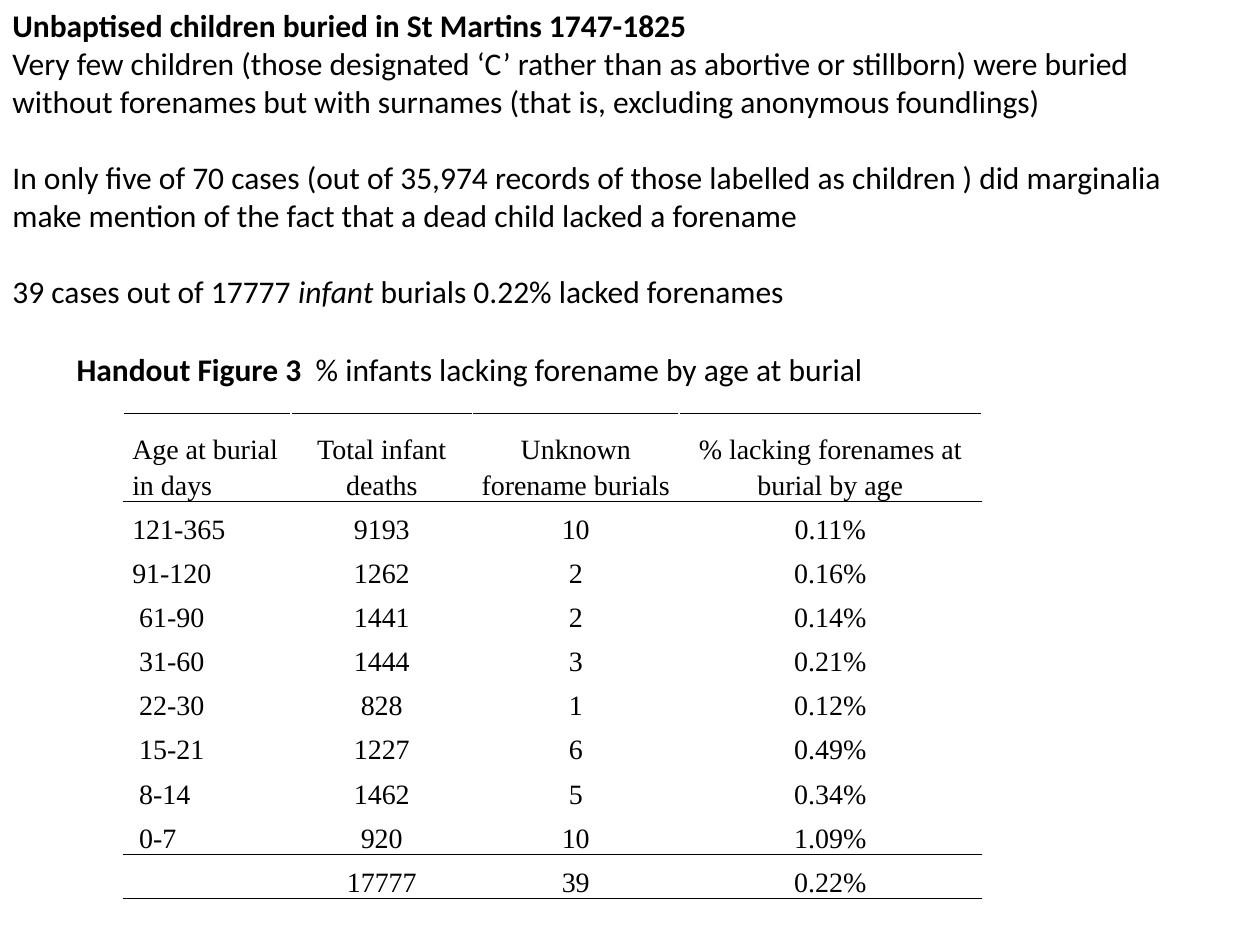
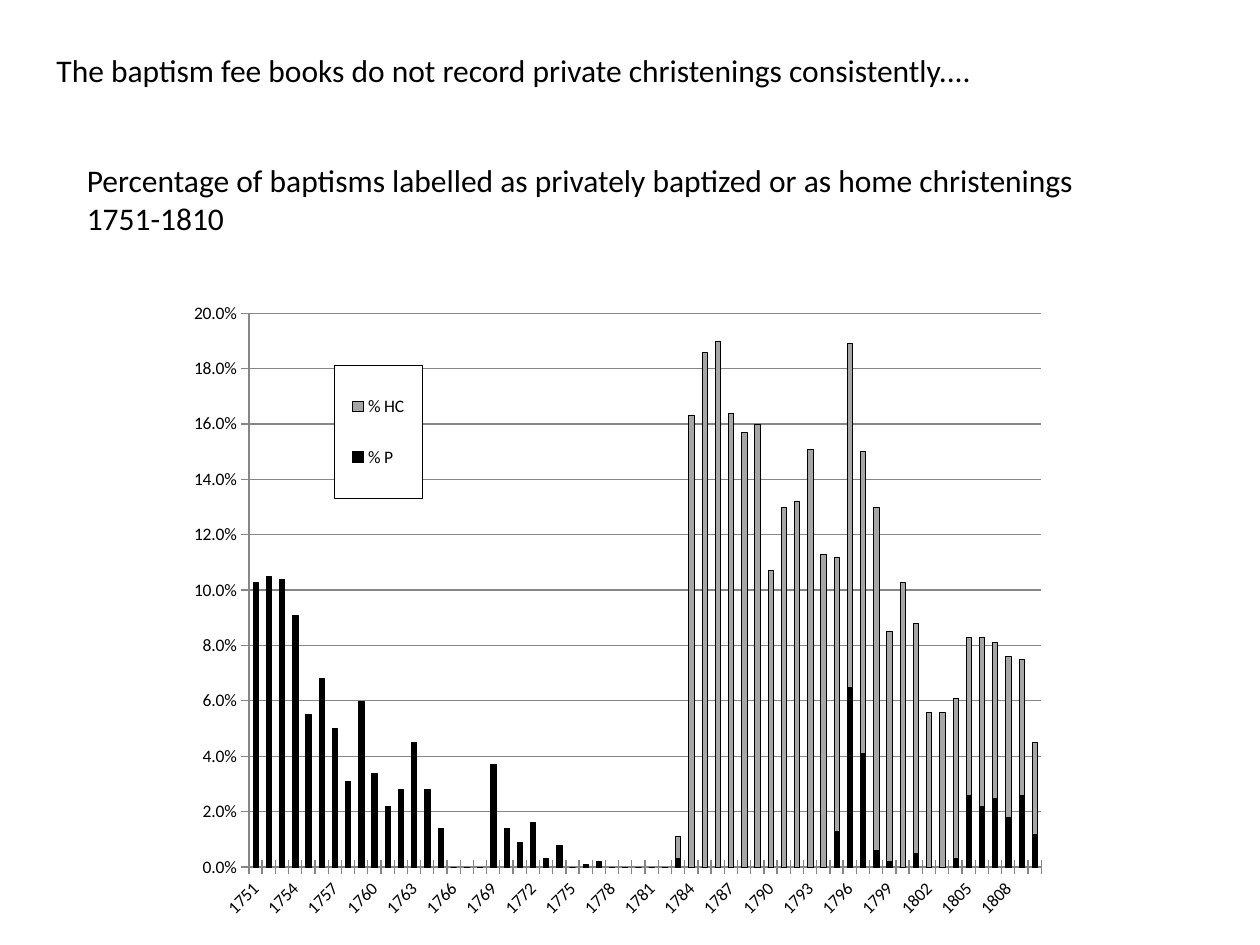
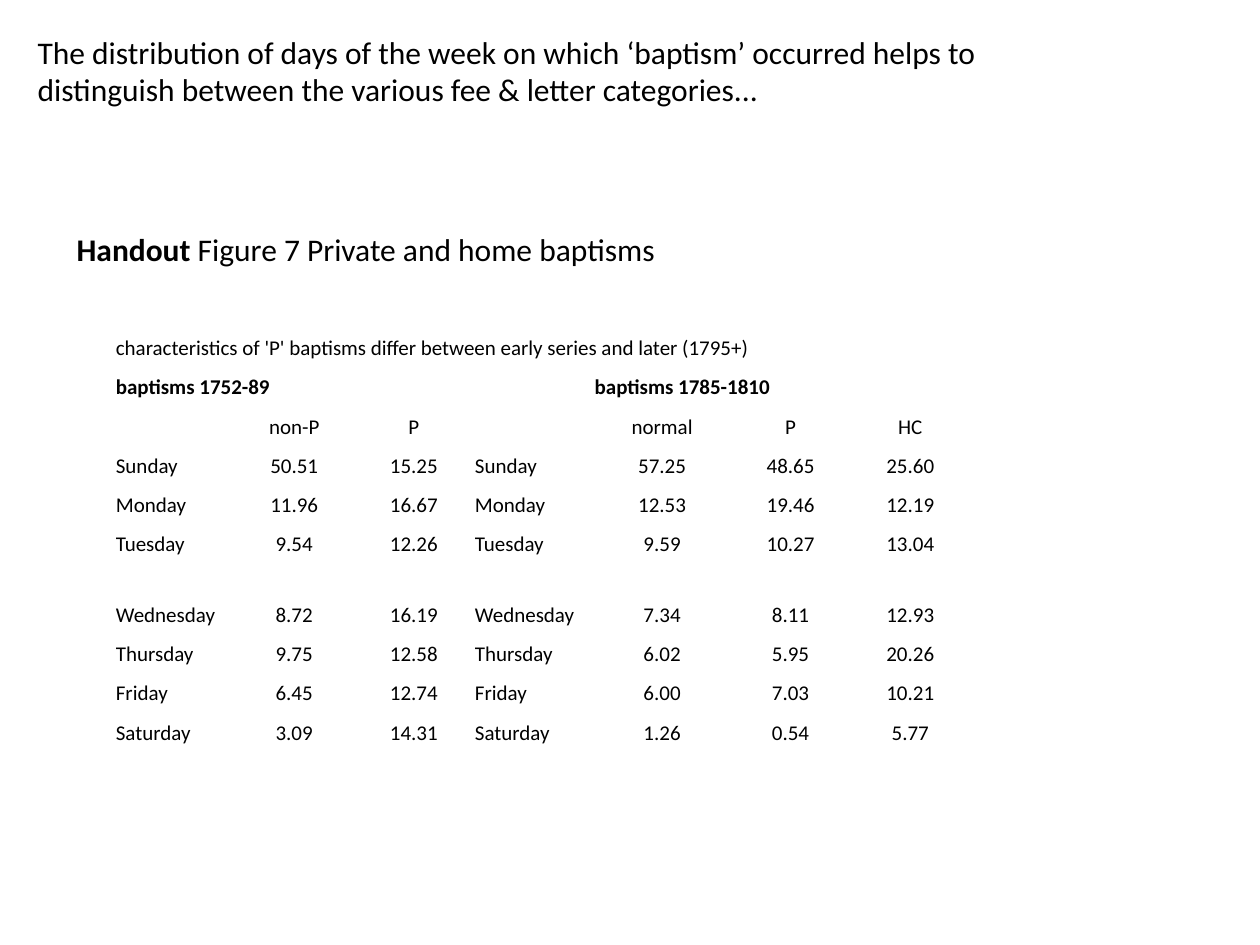
import lxml.etree
import pptx
import pptx.chart.data
import pptx.dml.color
import pptx.enum.chart
import pptx.enum.text
import pptx.oxml
import pptx.oxml.ns
import pptx.util

Inches = pptx.util.Inches
Pt = pptx.util.Pt
qn = pptx.oxml.ns.qn

COLOURS = {"ink": "000000", "home": "A6A6A6", "grid": "868686", "paper": "FFFFFF"}
SANS, SERIF = "Calibri", "Times New Roman"
BODY = 18
LINE = 22  # height of one body line, in points

AGES = [
    ["Age at burial in days", "Total infant deaths", "Unknown forename burials",
     "% lacking forenames at burial by age"],
    ["121-365", "9193", "10", "0.11%"],
    ["91-120", "1262", "2", "0.16%"],
    [" 61-90", "1441", "2", "0.14%"],
    [" 31-60", "1444", "3", "0.21%"],
    [" 22-30", "828", "1", "0.12%"],
    [" 15-21", "1227", "6", "0.49%"],
    [" 8-14", "1462", "5", "0.34%"],
    [" 0-7", "920", "10", "1.09%"],
    ["", "17777", "39", "0.22%"],
]

DAYS = {
    "Sunday": ["50.51", "15.25", "57.25", "48.65", "25.60"],
    "Monday": ["11.96", "16.67", "12.53", "19.46", "12.19"],
    "Tuesday": ["9.54", "12.26", "9.59", "10.27", "13.04"],
    "Wednesday": ["8.72", "16.19", "7.34", "8.11", "12.93"],
    "Thursday": ["9.75", "12.58", "6.02", "5.95", "20.26"],
    "Friday": ["6.45", "12.74", "6.00", "7.03", "10.21"],
    "Saturday": ["3.09", "14.31", "1.26", "0.54", "5.77"],
}

YEARS = [str(year) for year in range(1751, 1811)]
PRIVATE = [
    0.103, 0.105, 0.104, 0.091, 0.055, 0.068, 0.05, 0.031, 0.06, 0.034,
    0.022, 0.028, 0.045, 0.028, 0.014, 0, 0, 0, 0.037, 0.014,
    0.009, 0.016, 0.003, 0.008, 0, 0.001, 0.002, 0, 0, 0,
    0, 0, 0.003, 0, 0, 0, 0, 0, 0, 0,
    0, 0, 0, 0, 0.013, 0.065, 0.041, 0.006, 0.002, 0,
    0.005, 0, 0, 0.003, 0.026, 0.022, 0.025, 0.018, 0.026, 0.012]
HOME = [0] * 32 + [
    0.008, 0.163, 0.186, 0.19, 0.164, 0.157, 0.16, 0.107,
    0.13, 0.132, 0.151, 0.113, 0.099, 0.124, 0.109, 0.124, 0.083, 0.103,
    0.083, 0.056, 0.056, 0.058, 0.057, 0.061, 0.056, 0.058, 0.049, 0.033]


def colour(name):
    return pptx.dml.color.RGBColor.from_string(COLOURS[name])


def style(font, size, face=SANS):
    font.size = Pt(size)
    font.name = face
    font.color.rgb = colour("ink")


def write(slide, box, *paras):
    """Add a text box; each paragraph is a list of (text, mark), mark being "", "b" or "i"."""
    frame = slide.shapes.add_textbox(*map(Inches, box)).text_frame
    frame.word_wrap = True
    for i, parts in enumerate(paras):
        para = frame.add_paragraph() if i else frame.paragraphs[0]
        for text, mark in parts:
            run = para.add_run()
            run.text = text
            style(run.font, BODY)
            run.font.bold = mark == "b"
            run.font.italic = mark == "i"
    return frame


def rule(cell, side):
    """Draw a 1 pt line on the top (T) or bottom (B) of a cell."""
    cell._tc.get_or_add_tcPr().append(pptx.oxml.parse_xml(
        f'<a:ln{side} xmlns:a="{pptx.oxml.ns.nsuri("a")}" w="12700"><a:solidFill>'
        f'<a:srgbClr val="{COLOURS["ink"]}"/></a:solidFill></a:ln{side}>'))


def fill(cell, text, size, face, insets, align, space, bold):
    cell.text = text
    cell.vertical_anchor = pptx.enum.text.MSO_ANCHOR.BOTTOM
    cell.margin_left = cell.margin_right = Inches(insets[0])
    cell.margin_top, cell.margin_bottom = Inches(insets[1]), 0
    para = cell.text_frame.paragraphs[0]
    para.line_spacing = space
    para.alignment = align
    for run in para.runs:
        style(run.font, size, face)
        run.font.bold = bold
    if not text:
        lxml.etree.SubElement(para._p, qn("a:endParaRPr"), sz=str(size * 100))
    cell.fill.background()


def grid(slide, box, rows, widths, heights, size, face, insets,
         left=(0,), space=1.0, lines=(), spans=(), heads=()):
    """Add a plain table; left lists flush-left columns, lines the (row, side) rules,
    spans the (row, first, last) merges, heads the bold, flush-left rows."""
    table = slide.shapes.add_table(
        len(rows), len(widths), *map(Inches, box)).table
    table.first_row = table.horz_banding = False
    for col, width in zip(table.columns, widths):
        col.width = Inches(width)
    for row, height in zip(table.rows, heights):
        row.height = Inches(height)
    for r, first, last in spans:
        table.cell(r, first).merge(table.cell(r, last))
    merged = {r for r, _, _ in spans}
    for r, texts in enumerate(rows):
        for c, text in enumerate(texts):
            cell = table.cell(r, c)
            for line, side in lines:
                if line == r:
                    rule(cell, side)
            flush = c in left or r in merged
            align = pptx.enum.text.PP_ALIGN.LEFT if flush else pptx.enum.text.PP_ALIGN.CENTER
            fill(cell, text, size, face, insets, align, space, r in heads)


def layout(parent, index, x, y, w, h, inner=False):
    """Fix the place of a chart part, as shares of the chart."""
    for old in parent.findall(qn("c:layout")):
        parent.remove(old)
    node = lxml.etree.Element(qn("c:layout"))
    manual = lxml.etree.SubElement(node, qn("c:manualLayout"))
    items = [("layoutTarget", "inner")] if inner else []
    items += [("xMode", "edge"), ("yMode", "edge"), ("x", x), ("y", y), ("w", w), ("h", h)]
    for tag, val in items:
        lxml.etree.SubElement(manual, qn("c:" + tag), val=str(val))
    parent.insert(index, node)


def key(chart):
    """Add the boxed legend over the plot."""
    chart.has_legend = True
    legend = chart.legend
    legend.include_in_layout = False
    style(legend.font, 10)
    layout(legend._element, 1, 0.18, 0.127, 0.098, 0.205)
    legend._element.find(qn("c:overlay")).addnext(pptx.oxml.parse_xml(
        f'<c:spPr xmlns:c="{pptx.oxml.ns.nsuri("c")}" xmlns:a="{pptx.oxml.ns.nsuri("a")}">'
        f'<a:solidFill><a:srgbClr val="{COLOURS["paper"]}"/></a:solidFill>'
        f'<a:ln w="3175"><a:solidFill><a:srgbClr val="{COLOURS["ink"]}"/></a:solidFill></a:ln>'
        '</c:spPr>'))


def axes(chart):
    years, share = chart.category_axis, chart.value_axis
    share.minimum_scale, share.maximum_scale, share.major_unit = 0, 0.2, 0.02
    share.has_major_gridlines = True
    share.major_gridlines.format.line.color.rgb = colour("grid")
    share.tick_labels.number_format = "0.0%"
    share.tick_labels.number_format_is_linked = False
    for axis in (years, share):
        axis.format.line.color.rgb = colour("grid")
        axis.major_tick_mark = pptx.enum.chart.XL_TICK_MARK.CROSS
        style(axis.tick_labels.font, 10)
    node = years._element
    node.find(qn("c:txPr")).find(qn("a:bodyPr")).set("rot", "-2700000")
    skip = lxml.etree.Element(qn("c:tickLblSkip"), val="3")
    node.find(qn("c:noMultiLvlLbl")).addprevious(skip)


def bars(slide, box):
    data = pptx.chart.data.CategoryChartData(number_format="0.0%")
    data.categories = YEARS
    data.add_series("% P", PRIVATE)
    data.add_series("% HC", HOME)
    chart = slide.shapes.add_chart(
        pptx.enum.chart.XL_CHART_TYPE.COLUMN_STACKED, *map(Inches, box), data).chart
    chart.has_title = False
    style(chart.font, 10)
    plot = chart.plots[0]
    plot.vary_by_categories = False
    plot.overlap, plot.gap_width = 100, 150
    for series, name in zip(plot.series, ("ink", "home")):
        series.format.fill.solid()
        series.format.fill.fore_color.rgb = colour(name)
        series.format.line.color.rgb = colour("ink")
        series.format.line.width = Pt(0.25)
    axes(chart)
    key(chart)
    layout(chart._chartSpace.chart.plotArea, 0, 0.084, 0.046, 0.887, 0.857, True)


def burials(slide):
    frame = write(
        slide, (0, 0, 9.65, 2.83),
        [("Unbaptised children buried in St Martins 1747-1825", "b")],
        [("Very few children (those designated ‘C’ rather than as abortive or stillborn) were "
          "buried without forenames but with surnames (that is, excluding anonymous "
          "foundlings)", "")],
        [("In only five of 70 cases (out of 35,974 records of those labelled as children ) did "
          "marginalia make mention of the fact that a dead child lacked a forename", "")],
        [("39 cases out of 17777 ", ""), ("infant", "i"),
         (" burials 0.22% lacked forenames", "")])
    for para in frame.paragraphs[2:]:
        para.space_before = Pt(LINE)
    last = len(AGES) - 1
    grid(slide, (0.98, 3.28, 6.81, 4.09), AGES, [1.33, 1.44, 1.64, 2.4],
         [0.7] + [0.35] * last, 16, SERIF, (0.07, 0), space=1.15,
         lines=[(0, "T"), (0, "B"), (1, "T"), (last - 1, "B"), (last, "T"), (last, "B")])
    write(slide, (0.51, 2.73, 6.77, 0.4),
          [("Handout Figure 3  ", "b"), ("% infants lacking forename by age at burial", "")])


def fees(slide):
    bars(slide, (1.38, 2.25, 7.09, 5.13))
    write(slide, (0.59, 1.23, 8.58, 0.71),
          [("Percentage of baptisms labelled as privately baptized or as home christenings "
            "1751-1810", "")])
    write(slide, (0.35, 0.36, 8.9, 0.4),
          [("The baptism fee books do not record private christenings consistently....", "")])


def weekdays(slide):
    rows = [
        [""] * 7,
        ["characteristics of 'P' baptisms differ between early series and later (1795+)"]
        + [""] * 6,
        ["baptisms 1752-89", "", "", "", "baptisms 1785-1810", "", ""],
        ["", "non-P", "P", "", "normal", "P", "HC"],
    ] + [[day, *vals[:2], day, *vals[2:]] for day, vals in DAYS.items()]
    heights = [0.57 if row[0] == "Wednesday" else 0.31 for row in rows]
    grid(slide, (0.91, 2.25, 6.77, 3.7), rows, [0.95] * 4 + [1.09] + [0.95] * 2, heights,
         12, SANS, (0.01, 0.01), left=(0, 3), heads=(2,),
         spans=[(0, 0, 2), (1, 0, 6), (2, 0, 1), (2, 4, 5)])
    write(slide, (0.2, 0.21, 8.66, 0.71),
          [("The distribution of days of the week on which ‘baptism’ occurred helps to "
            "distinguish between the various fee & letter categories...", "")])
    write(slide, (0.51, 1.78, 7.48, 0.4),
          [("Handout ", "b"), ("Figure 7 Private and home baptisms", "")])


def main():
    deck = pptx.Presentation()
    deck.slide_width, deck.slide_height = Inches(10), Inches(7.5)
    for build in (burials, fees, weekdays):
        build(deck.slides.add_slide(deck.slide_layouts[6]))
    deck.save("out.pptx")


if __name__ == "__main__":
    main()
